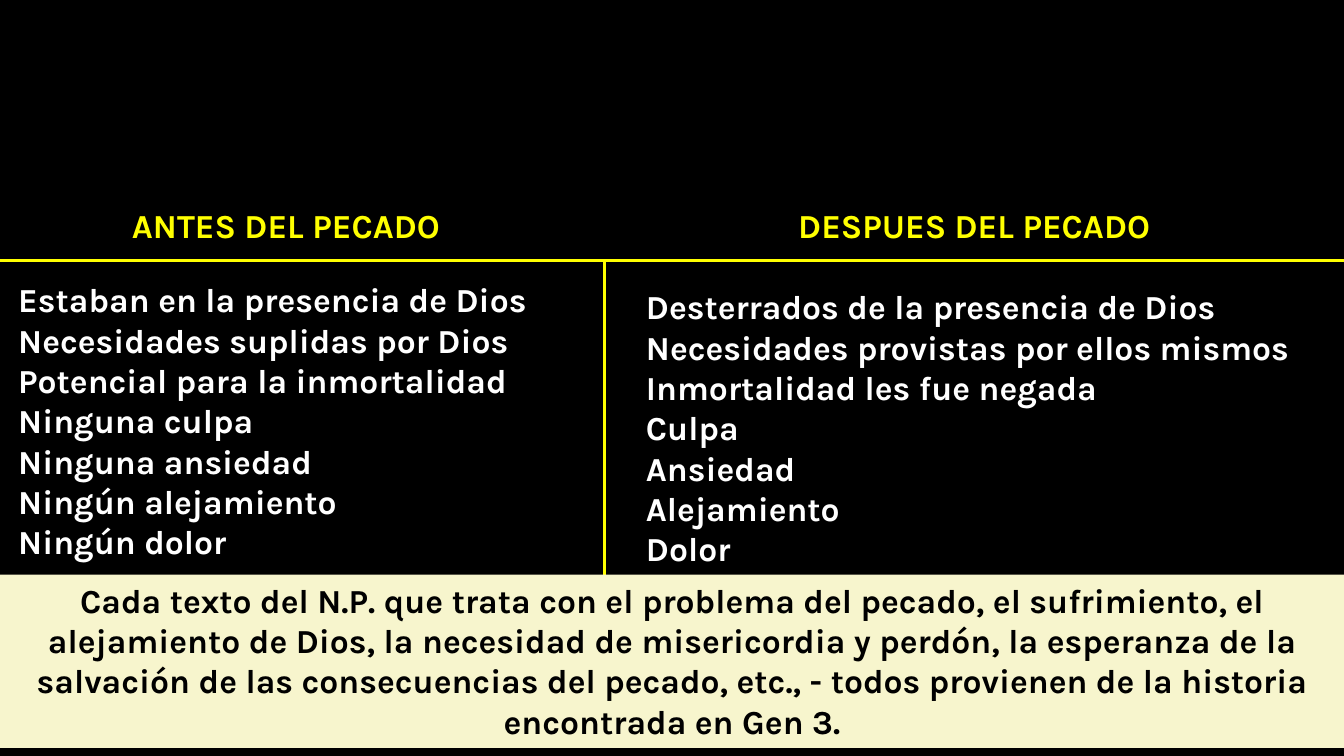
from lxml import etree
from pptx import Presentation
from pptx.dml.color import RGBColor
from pptx.enum.shapes import MSO_CONNECTOR, MSO_SHAPE
from pptx.enum.text import MSO_ANCHOR, PP_ALIGN
from pptx.oxml.ns import qn
from pptx.util import Cm, Pt

BLACK = RGBColor(0x00, 0x00, 0x00)
WHITE = RGBColor(0xFF, 0xFF, 0xFF)
YELLOW = RGBColor(0xFF, 0xFF, 0x00)
CREAM = RGBColor(0xF7, 0xF5, 0xCD)

WIDTH, HEIGHT = 33.87, 19.05
RULE_Y, DIVIDER_X, BAND_Y = 6.56, 15.24, 14.48
HEADING_Y, HEADING_H = 5.03, 1.27
LIST_H = 7.44

BEFORE = [
    "Estaban en la presencia de Dios",
    "Necesidades suplidas por Dios",
    "Potencial para la inmortalidad",
    "Ninguna culpa",
    "Ninguna ansiedad",
    "Ningún alejamiento",
    "Ningún dolor",
]
AFTER = [
    "Desterrados de la presencia de Dios",
    "Necesidades provistas por ellos mismos",
    "Inmortalidad les fue negada",
    "Culpa",
    "Ansiedad",
    "Alejamiento",
    "Dolor",
]
CONCLUSION = (
    "Cada texto del N.P. que trata con el problema del pecado, el sufrimiento, "
    "el alejamiento de Dios, la necesidad de misericordia y perdón, la esperanza "
    "de la salvación de las consecuencias del pecado, etc., - todos provienen de "
    "la historia encontrada en Gen 3."
)


def write_lines(s, lines, color, align):
    tf = s.text_frame
    tf.word_wrap = True
    tf.vertical_anchor = MSO_ANCHOR.TOP
    for i, line in enumerate(lines):
        p = tf.paragraphs[0] if i == 0 else tf.add_paragraph()
        p.alignment = align
        r = p.add_run()
        r.text = line
        r.font.color.rgb = color
        for name, value in {"name": "Karla", "size": Pt(24), "bold": True}.items():
            setattr(r.font, name, value)


prs = Presentation()
prs.slide_width, prs.slide_height = Cm(WIDTH), Cm(HEIGHT)
slide = prs.slides.add_slide(prs.slide_layouts[6])
slide.background.fill.solid()
slide.background.fill.fore_color.rgb = BLACK

# Headings and lists of the two columns
for lines, box, color, align in [
    (["ANTES DEL PECADO"], (0.64, HEADING_Y, 13.13, HEADING_H), YELLOW, PP_ALIGN.CENTER),
    (["DESPUES DEL PECADO"], (18.62, HEADING_Y, 11.86, HEADING_H), YELLOW, PP_ALIGN.CENTER),
    (BEFORE, (0.21, 6.91, 16.51, LIST_H), WHITE, PP_ALIGN.LEFT),
    (AFTER, (16.03, 7.09, 17.58, LIST_H), WHITE, PP_ALIGN.LEFT),
]:
    s = slide.shapes.add_textbox(*map(Cm, box))
    write_lines(s, lines, color, align)

# Rule under the headings and divider between the columns
for ends in [
    (0, RULE_Y, WIDTH, RULE_Y),
    (DIVIDER_X, RULE_Y, DIVIDER_X, BAND_Y),
]:
    rule = slide.shapes.add_connector(MSO_CONNECTOR.STRAIGHT, *map(Cm, ends))
    rule.line.color.rgb = YELLOW
    rule.line.width = Pt(2.25)
    etree.SubElement(rule._element.spPr, qn("a:effectLst"))

# Conclusion band
band = slide.shapes.add_shape(MSO_SHAPE.RECTANGLE, Cm(0), Cm(BAND_Y), Cm(WIDTH), Cm(4.37))
band.shadow.inherit = False
band.fill.solid()
band.fill.fore_color.rgb = CREAM
band.line.fill.background()
write_lines(band, [CONCLUSION], BLACK, PP_ALIGN.CENTER)

prs.save("out.pptx")
